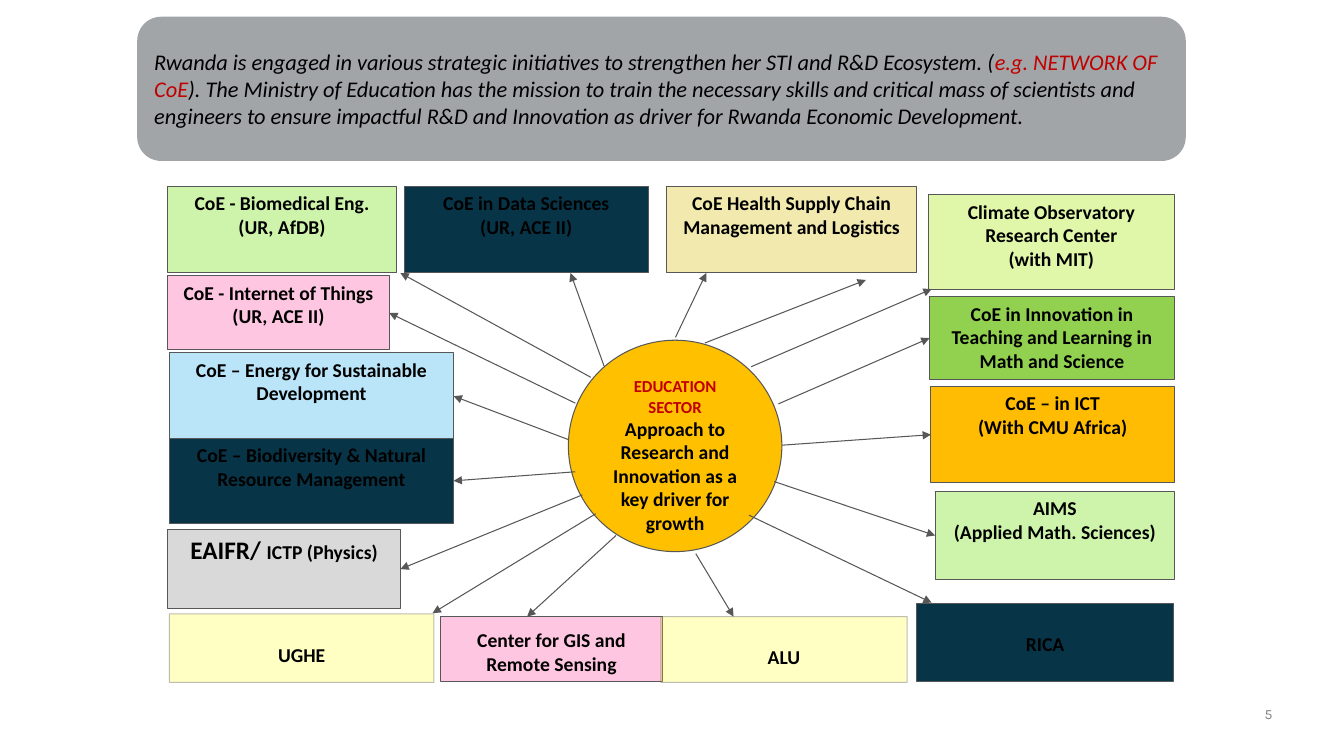
from dataclasses import dataclass

from lxml.etree import SubElement
from pptx import Presentation
from pptx.dml.color import RGBColor
from pptx.enum.shapes import MSO_CONNECTOR, MSO_SHAPE
from pptx.enum.text import MSO_ANCHOR, PP_ALIGN
from pptx.oxml.ns import qn
from pptx.util import Pt


@dataclass(frozen=True)
class Theme:
    font: str = "Calibri"
    number_font: str = "Karla"
    ink: str = "000000"
    accent: str = "C00000"
    line: str = "575757"
    number: str = "808080"
    banner: str = "A2A5A8"
    hub: str = "FFC000"
    green: str = "CDF4AA"
    lime: str = "E0F6A8"
    leaf: str = "92D050"
    navy: str = "083448"
    sand: str = "F1E9AD"
    pink: str = "FFC6E2"
    sky: str = "BAE4F7"
    amber: str = "FFBC02"
    grey: str = "D9D9D9"
    yellow: str = "FFFF00"
    banner_size: int = 16
    large_size: int = 18
    label_size: int = 14
    small_size: int = 12
    number_size: int = 10
    line_width: float = 0.75


@dataclass(frozen=True)
class Box:
    left: float
    top: float
    width: float
    height: float

    def inside(self, left, top, width, height):
        return Box(self.left + left, self.top + top, width, height)

    def lengths(self):
        return Pt(self.left), Pt(self.top), Pt(self.width), Pt(self.height)


THEME = Theme()
TOP, LEFT, BOTTOM, RIGHT = range(4)
LOW = 20.5  # top inset that puts a single label on the second line

# Name: place within the map, fill, lines, top inset
CENTRES = {
    "biomedical": ((0, 0, 163, 62), THEME.green, ["CoE - Biomedical Eng. (UR, AfDB)"], 3.6),
    "data": ((169, 0, 174, 62), THEME.navy, ["CoE in Data Sciences", "(UR, ACE II)"], 3.6),
    "health": ((356, 0, 179, 62), THEME.sand,
               ["CoE Health Supply Chain Management and Logistics"], 3.6),
    "climate": ((543, 6, 176, 68), THEME.lime,
                ["Climate Observatory Research Center", "(with MIT)"], 3.6),
    "things": ((0, 64, 158, 53), THEME.pink, ["CoE - Internet of Things (UR, ACE II)"], 3.6),
    "teaching": ((544, 79, 175, 59), THEME.leaf,
                 ["CoE in Innovation in Teaching and Learning in Math and Science"], 3.6),
    "energy": ((1, 119, 203, 62), THEME.sky, ["CoE – Energy for Sustainable Development"], 3.6),
    "ict": ((545, 143, 174, 69), THEME.amber, ["CoE – in ICT", "(With CMU Africa)"], 3.6),
    "biodiversity": ((1, 180, 203, 61), THEME.navy,
                     ["CoE – Biodiversity & Natural Resource Management"], 3.6),
    "aims": ((548, 218, 171, 63), THEME.green, ["AIMS", "(Applied Math. Sciences)"], 3.6),
    "physics": ((0, 245, 166, 57), THEME.grey, ["EAIFR/ ", "ICTP (Physics)"], 3.6),
    "ughe": ((1, 305.5, 189, 49), THEME.yellow, ["UGHE"], LOW),
    "gis": ((195, 307.5, 158, 46), THEME.pink, ["Center for GIS and Remote Sensing"], 8),
    "alu": ((352, 307.5, 176, 47), THEME.yellow, ["ALU"], LOW),
    "rica": ((534.5, 298, 184, 55.5), THEME.navy, ["RICA"], LOW),
}
HUB = (286, 110, 152.5, 151)

# Start and end within the map
FREE_ARROWS = [
    ((302, 136.5), (166, 62)), ((311.5, 128.5), (287.5, 62)),
    ((362.5, 108), (384.5, 62)), ((383.5, 112), (498.5, 67)),
    ((416.5, 129), (545.5, 73.5)), ((415, 235), (545.5, 297.5)),
    ((377, 262.5), (404, 307.5)), ((320, 249.5), (256.5, 307.5)),
    ((305.5, 234), (189, 305)),
]
# Start within the map, centre reached, side reached
JOINED_ARROWS = [
    ((291, 155), "things", RIGHT), ((286, 181), "energy", RIGHT),
    ((291, 204), "biodiversity", RIGHT), ((296, 220.5), "physics", RIGHT),
    ((436, 155.5), "teaching", LEFT), ((438.5, 185), "ict", LEFT),
    ((433, 211), "aims", LEFT),
]


def style_font(font, size, color=THEME.ink, bold=None, italic=None, name=THEME.font):
    font.name, font.size, font.bold, font.italic = name, Pt(size), bold, italic
    font.color.rgb = RGBColor.from_string(color)


def add_panel(slide, kind, box, fill, outlined=True):
    shape = slide.shapes.add_shape(kind, *box.lengths())
    shape.shadow.inherit = False
    shape.fill.solid()
    shape.fill.fore_color.rgb = RGBColor.from_string(fill)
    if outlined:
        shape.line.width = Pt(THEME.line_width)
        shape.line.color.rgb = RGBColor.from_string(THEME.line)
    else:
        shape.line.fill.background()
    shape.text_frame.word_wrap = True
    shape.text_frame.vertical_anchor = MSO_ANCHOR.TOP
    return shape


def make_translucent(shape):
    colors = shape._element.spPr.iter(qn("a:srgbClr"))
    for color, percent in zip(list(colors), (23, 39)):
        SubElement(color, qn("a:alpha"), val=str(percent * 1000))


def add_lines(frame, lines):
    for index, (text, size, color) in enumerate(lines):
        para = frame.paragraphs[0] if index == 0 else frame.add_paragraph()
        para.text = text
        para.alignment = PP_ALIGN.CENTER
        style_font(para.font, size, color, bold=True)


def add_arrow(slide, box, start, end):
    points = [Pt(value) for x, y in (start, end) for value in (box.left + x, box.top + y)]
    arrow = slide.shapes.add_connector(MSO_CONNECTOR.STRAIGHT, *points)
    arrow.line.width = Pt(THEME.line_width)
    arrow.line.color.rgb = RGBColor.from_string(THEME.line)
    SubElement(arrow.line._get_or_add_ln(), qn("a:tailEnd"), type="triangle")
    SubElement(arrow._element.spPr, qn("a:effectLst"))
    return arrow


def add_banner(slide, box):
    banner = add_panel(slide, MSO_SHAPE.ROUNDED_RECTANGLE, box, THEME.banner, outlined=False)
    banner.text_frame.vertical_anchor = MSO_ANCHOR.MIDDLE
    para = banner.text_frame.paragraphs[0]
    para.alignment = PP_ALIGN.LEFT
    for text, color in (
        ("Rwanda is engaged in various strategic initiatives to strengthen her STI and "
         "R&D Ecosystem. (", THEME.ink),
        ("e.g. NETWORK OF CoE", THEME.accent),
        ("). The Ministry of Education has the mission to train the necessary skills and "
         "critical mass of scientists and engineers to ensure impactful R&D and Innovation "
         "as driver for Rwanda Economic Development.", THEME.ink),
    ):
        span = para.add_run()
        span.text = text
        style_font(span.font, THEME.banner_size, color, italic=True)


def add_centre(slide, box, name, fill, lines, inset):
    panel = add_panel(slide, MSO_SHAPE.RECTANGLE, box, fill)
    frame = panel.text_frame
    frame.margin_top = Pt(inset)
    if name == "physics":  # one line in two sizes
        para = frame.paragraphs[0]
        para.alignment = PP_ALIGN.CENTER
        for text, size in zip(lines, (THEME.large_size, THEME.label_size)):
            span = para.add_run()
            span.text = text
            style_font(span.font, size, bold=True)
    else:
        add_lines(frame, [(line, THEME.label_size, THEME.ink) for line in lines])
    if fill == THEME.yellow:
        make_translucent(panel)
    return panel


def add_network(slide, box):
    # Centres of excellence around the hub
    panels = {name: add_centre(slide, box.inside(*place), name, *details)
              for name, (place, *details) in CENTRES.items()}
    hub = add_panel(slide, MSO_SHAPE.OVAL, box.inside(*HUB), THEME.hub)
    add_lines(hub.text_frame, [
        ("EDUCATION SECTOR", THEME.small_size, THEME.accent),
        ("Approach to Research and Innovation as a key driver for growth",
         THEME.label_size, THEME.ink),
    ])
    # Arrows from the hub
    for start, end in FREE_ARROWS:
        add_arrow(slide, box, start, end)
    for start, name, side in JOINED_ARROWS:
        add_arrow(slide, box, start, start).end_connect(panels[name], side)


def add_page_number(slide, box):
    frame = slide.shapes.add_textbox(*box.lengths()).text_frame
    frame.word_wrap = True
    frame.vertical_anchor = MSO_ANCHOR.BOTTOM
    frame.margin_left = frame.margin_top = frame.margin_right = frame.margin_bottom = 0
    para = frame.paragraphs[0]
    para.text = "5"
    para.alignment = PP_ALIGN.RIGHT
    style_font(para.font, THEME.number_size, THEME.number, name=THEME.number_font)


def main():
    deck = Presentation()
    deck.slide_width, deck.slide_height = Pt(960), Pt(540)
    page = deck.slides.add_slide(deck.slide_layouts[6])
    add_network(page, Box(120, 133, 719, 355))
    add_banner(page, Box(98, 12, 749, 103))
    add_page_number(page, Box(879, 504, 30, 12))
    deck.save("out.pptx")


if __name__ == "__main__":
    main()
